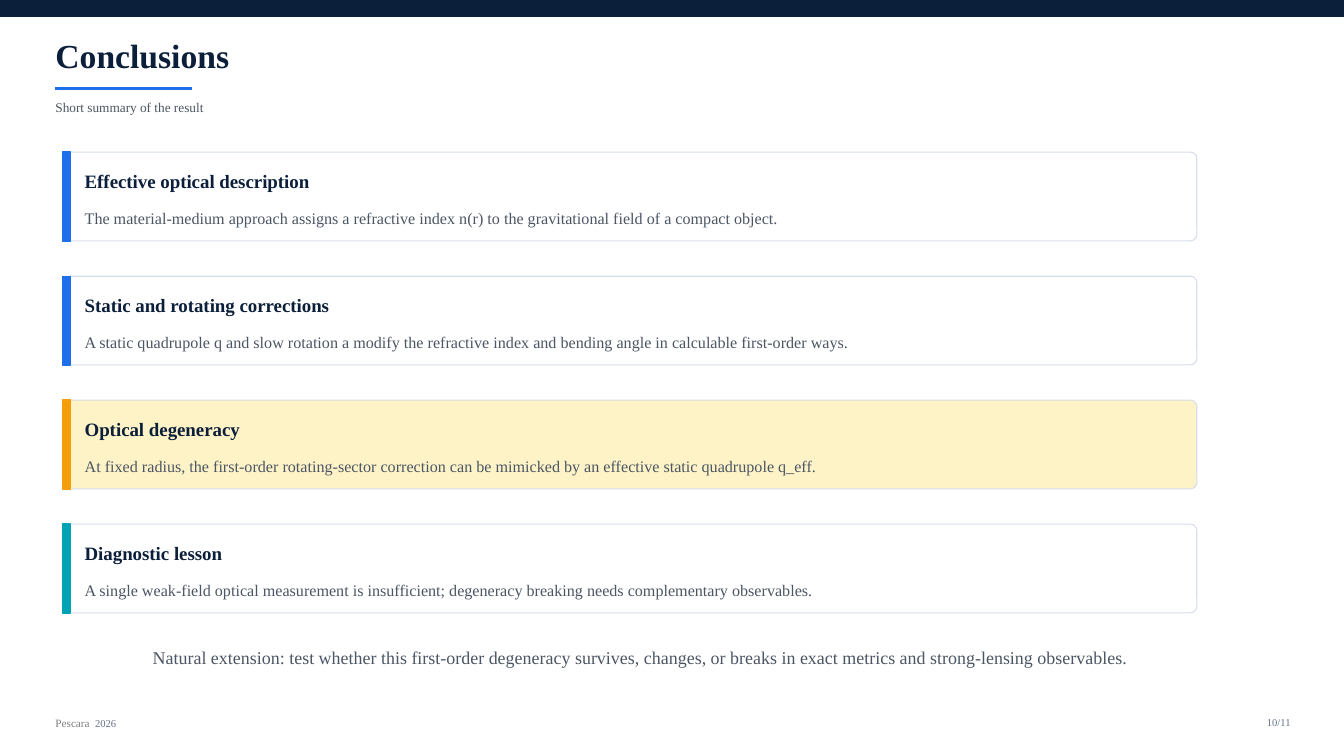
from pptx import Presentation
from pptx.dml.color import RGBColor
from pptx.enum.shapes import MSO_CONNECTOR, MSO_SHAPE
from pptx.enum.text import MSO_ANCHOR, MSO_AUTO_SIZE, PP_ALIGN
from pptx.oxml.ns import qn
from pptx.util import Emu, Pt
from lxml.etree import SubElement

PX = 9144  # EMU per px, 100 px to the inch
FONT = "Times New Roman"
NAVY, BLUE, AMBER, TEAL = "0B1F3A", "1F6FEB", "F59E0B", "00A3B5"
WHITE, CREAM, BORDER = "FFFFFF", "FEF3C7", "D8DEE9"
BODY, SLATE, GRAY = "4B5563", "64748B", "808080"

CARD_LEFT, CARD_TOP, CARD_WIDTH, CARD_HEIGHT, CARD_STEP = 62, 151, 1125, 88, 123
CARDS = [
    ("Effective optical description",
     "The material-medium approach assigns a refractive index n(r) to the "
     "gravitational field of a compact object.", BLUE, WHITE),
    ("Static and rotating corrections",
     "A static quadrupole q and slow rotation a modify the refractive index "
     "and bending angle in calculable first-order ways.", BLUE, WHITE),
    ("Optical degeneracy",
     "At fixed radius, the first-order rotating-sector correction can be "
     "mimicked by an effective static quadrupole q_eff.", AMBER, CREAM),
    ("Diagnostic lesson",
     "A single weak-field optical measurement is insufficient; degeneracy "
     "breaking needs complementary observables.", TEAL, WHITE),
]


def px(*lengths):
    return [Emu(length * PX) for length in lengths]


def color(hex_string):
    return RGBColor.from_string(hex_string)


def style_font(font, size, hex_string, bold=False):
    font.name = FONT
    font.size = Pt(size)
    font.bold = bold
    font.color.rgb = color(hex_string)


def format_frame(shape, align):
    """Remove the margins, centre vertically and return the first paragraph."""
    frame = shape.text_frame
    frame.word_wrap = True
    frame.auto_size = MSO_AUTO_SIZE.NONE
    frame.vertical_anchor = MSO_ANCHOR.MIDDLE
    frame.margin_left = frame.margin_right = 0
    frame.margin_top = frame.margin_bottom = 0
    paragraph = frame.paragraphs[0]
    paragraph.alignment = align
    return paragraph


def add_text(slide, box, text, size, hex_string, bold=False, align=PP_ALIGN.LEFT):
    paragraph = format_frame(slide.shapes.add_textbox(*px(*box)), align)
    paragraph.text = text
    style_font(paragraph.font, size, hex_string, bold)


def add_box(slide, box, fill, line, line_width=1, kind=MSO_SHAPE.RECTANGLE):
    shape = slide.shapes.add_shape(kind, *px(*box))
    shape.shadow.inherit = False
    shape.fill.solid()
    shape.fill.fore_color.rgb = color(fill)
    shape.line.color.rgb = color(line)
    shape.line.width = Pt(line_width)
    return shape


def add_rule(slide, left, top, right, hex_string, width):
    rule = slide.shapes.add_connector(
        MSO_CONNECTOR.STRAIGHT, *px(left, top, right, top))
    rule.line.color.rgb = color(hex_string)
    rule.line.width = Pt(width)
    SubElement(rule.line._get_or_add_ln().getparent(), qn("a:effectLst"))


def set_title(slide, box, text):
    title = slide.shapes.title
    title.left, title.top, title.width, title.height = px(*box)
    paragraph = format_frame(title, PP_ALIGN.LEFT)
    paragraph.text = text
    style_font(paragraph.font, 24, NAVY, bold=True)


def add_card(slide, top, heading, body, accent, fill):
    card = add_box(slide, (CARD_LEFT, top, CARD_WIDTH, CARD_HEIGHT), fill,
                   BORDER, 0.8, MSO_SHAPE.ROUNDED_RECTANGLE)
    card.adjustments[0] = 0.07
    add_box(slide, (CARD_LEFT, top, 8, CARD_HEIGHT), accent, accent)
    text_left = CARD_LEFT + 22
    add_text(slide, (text_left, top + 16, 1090, 25), heading, 13.5, NAVY, bold=True)
    add_text(slide, (text_left, top + 52, 1087, 26), body, 11.5, BODY)


def add_footer(slide):
    add_text(slide, (1235, 708, 45, 18), "10/11", 7.5, SLATE, align=PP_ALIGN.RIGHT)
    footer = slide.shapes.add_textbox(*px(55, 708, 570, 18))
    paragraph = format_frame(footer, PP_ALIGN.LEFT)
    for text, size, hex_string in [("Pescara", 8, GRAY), ("  2026", 7.5, SLATE)]:
        run = paragraph.add_run()
        run.text = text
        style_font(run.font, size, hex_string)


def main():
    presentation = Presentation()
    presentation.slide_width, presentation.slide_height = px(1333, 750)
    slide = presentation.slides.add_slide(presentation.slide_layouts[5])

    # Header
    add_box(slide, (0, 0, 1333, 16), NAVY, NAVY)
    set_title(slide, (55, 34, 740, 42), "Conclusions")
    add_rule(slide, 55, 88, 190, BLUE, 2)
    add_text(slide, (55, 97, 750, 18), "Short summary of the result", 9.5, BODY)

    # Conclusion cards
    for index, card in enumerate(CARDS):
        add_card(slide, CARD_TOP + index * CARD_STEP, *card)

    # Outlook and footer
    add_text(slide, (100, 635, 1070, 34),
             "Natural extension: test whether this first-order degeneracy survives, "
             "changes, or breaks in exact metrics and strong-lensing observables.",
             12.8, BODY, align=PP_ALIGN.CENTER)
    add_footer(slide)

    presentation.save("out.pptx")


if __name__ == "__main__":
    main()
